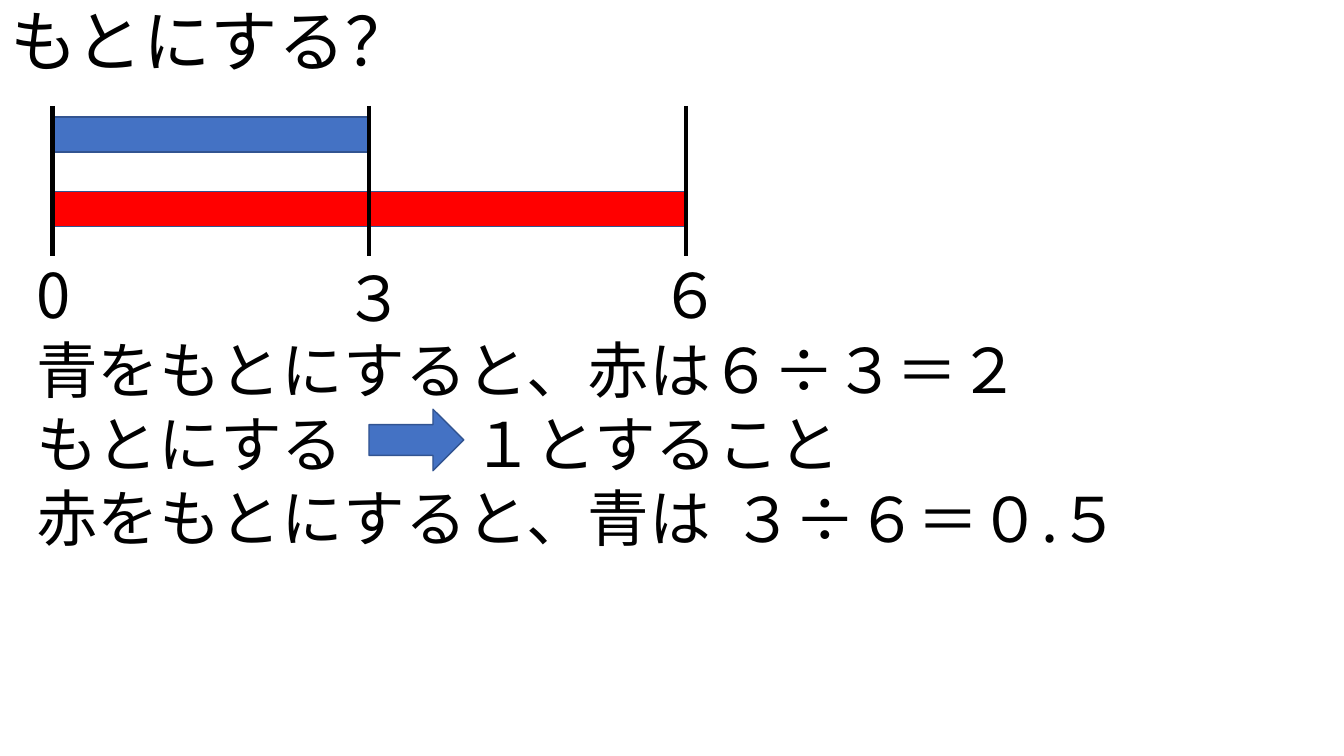
from dataclasses import dataclass

from lxml import etree
from pptx import Presentation
from pptx.dml.color import RGBColor
from pptx.enum import shapes, text
from pptx.oxml import ns
from pptx.util import Inches, Pt


@dataclass(frozen=True)
class Theme:
    font: str = "Noto Sans CJK JP"
    ink: str = "000000"
    blue: str = "4472C4"
    red: str = "FF0000"
    outline: str = "325491"
    title_size: int = 48
    body_size: int = 44
    line_height: float = 1.2


class SlideBuilder:
    def __init__(self, slide, theme):
        self.slide = slide
        self.theme = theme

    def set_text(self, shape, lines, size):
        frame = shape.text_frame
        frame.text = "\n".join(lines)
        frame.word_wrap = True
        frame.auto_size = text.MSO_AUTO_SIZE.NONE
        frame.vertical_anchor = text.MSO_ANCHOR.TOP
        for paragraph in frame.paragraphs:
            paragraph.alignment = text.PP_ALIGN.LEFT
            paragraph.line_spacing = Pt(size * self.theme.line_height)
            paragraph.space_before = Pt(0)
            for run in paragraph.runs:
                run.font.name = self.theme.font
                run.font.size = Pt(size)
                run.font.color.rgb = RGBColor.from_string(self.theme.ink)
                properties = run.font._element
                east_asian = etree.SubElement(properties, ns.qn("a:ea"))
                east_asian.set("typeface", self.theme.font)

    def title(self, line, left, top, width, height):
        title = self.slide.shapes.title
        title.left, title.top = Inches(left), Inches(top)
        title.width, title.height = Inches(width), Inches(height)
        self.set_text(title, [line], self.theme.title_size)

    def text_box(self, lines, left, top, width, height):
        box = self.slide.shapes.add_textbox(
            Inches(left), Inches(top), Inches(width), Inches(height))
        self.set_text(box, lines, self.theme.body_size)

    def block(self, kind, color, left, top, width, height):
        shape = self.slide.shapes.add_shape(
            kind, Inches(left), Inches(top), Inches(width), Inches(height))
        shape.shadow.inherit = False
        shape.fill.solid()
        shape.fill.fore_color.rgb = RGBColor.from_string(color)
        shape.line.color.rgb = RGBColor.from_string(self.theme.outline)
        shape.line.width = Pt(1)

    def tick(self, x, top, bottom):
        line = self.slide.shapes.add_connector(
            shapes.MSO_CONNECTOR.STRAIGHT,
            Inches(x), Inches(top), Inches(x), Inches(bottom))
        line.line.color.rgb = RGBColor.from_string(self.theme.ink)
        line.line.width = Pt(3)
        etree.SubElement(line._element.spPr, ns.qn("a:effectLst"))


def main():
    presentation = Presentation()
    presentation.slide_width = Inches(13.33)
    presentation.slide_height = Inches(7.5)
    theme = Theme()
    slide = presentation.slides.add_slide(presentation.slide_layouts[5])
    builder = SlideBuilder(slide, theme)

    builder.title("もとにする？", 0, -0.06, 12.98, 1.72)

    origin, step = 0.52, 3.14
    rectangle = shapes.MSO_SHAPE.RECTANGLE
    builder.block(rectangle, theme.blue, origin, 1.16, step, 0.35)
    builder.block(rectangle, theme.red, origin, 1.9, 2 * step, 0.35)
    for index in range(3):
        builder.tick(origin + index * step, 1.05, 2.54)
    for label, left, top in (("0", 0.26, 2.5), ("３", 3.31, 2.53), ("６", 6.44, 2.5)):
        builder.text_box([label], left, top, 0.43, 0.84)

    builder.text_box(
        ["青をもとにすると、赤は６÷３＝２", "もとにする", "赤をもとにすると、青は"],
        0.26, 3.24, 12.81, 2.32)
    builder.block(shapes.MSO_SHAPE.RIGHT_ARROW, theme.blue, 3.66, 4.06, 0.94, 0.61)
    builder.text_box(["１とすること"], 4.59, 3.98, 4.94, 0.84)
    builder.text_box(["３÷６＝０.５"], 7.17, 4.72, 4.66, 0.84)

    presentation.save("out.pptx")


if __name__ == "__main__":
    main()
